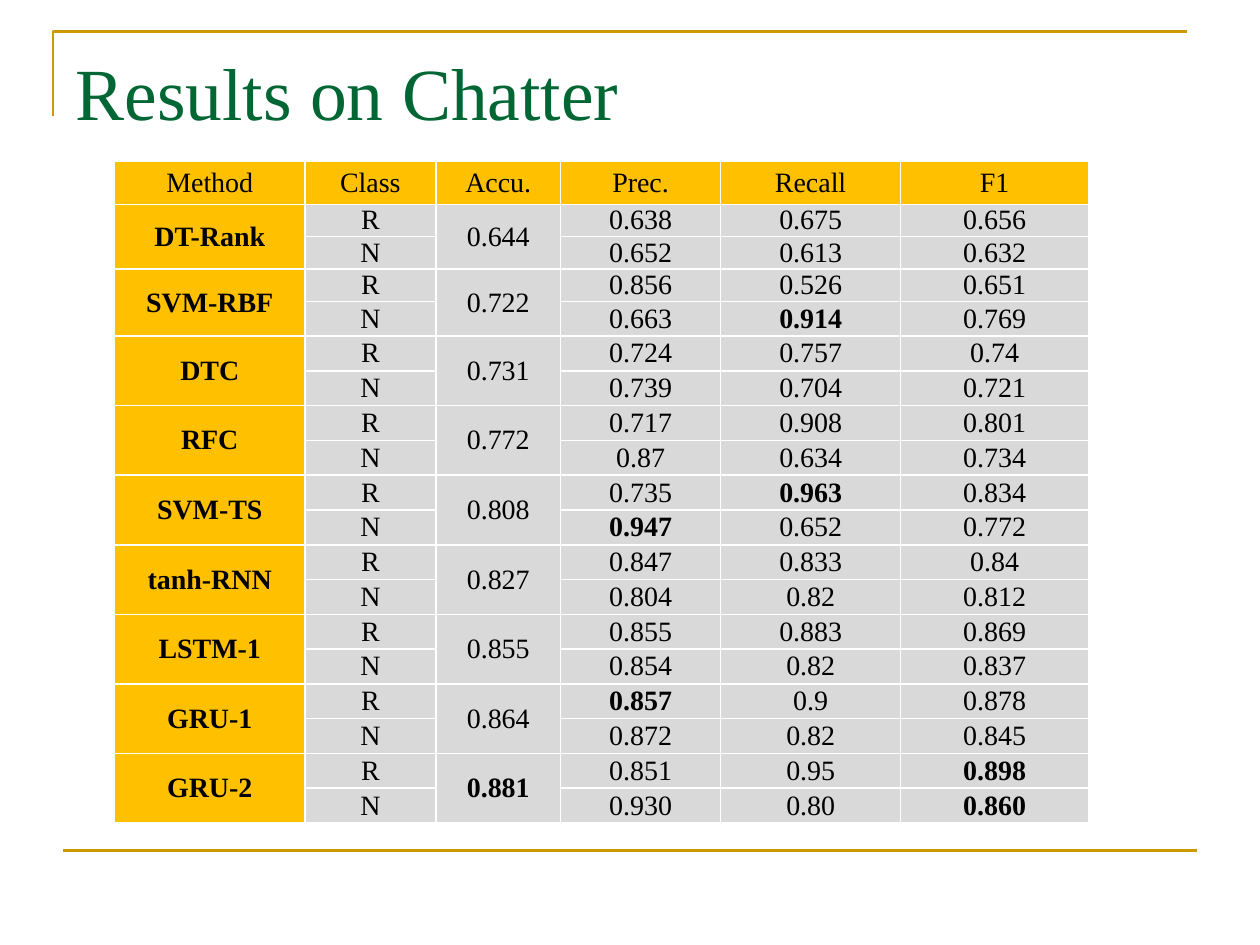
from dataclasses import dataclass

from lxml import etree
from pptx import Presentation
from pptx.dml.color import RGBColor
from pptx.enum.shapes import MSO_CONNECTOR
from pptx.enum.text import MSO_ANCHOR, PP_ALIGN
from pptx.oxml.ns import qn
from pptx.util import Inches, Pt

STRAIGHT = MSO_CONNECTOR.STRAIGHT
MIDDLE = MSO_ANCHOR.MIDDLE
LEFT, CENTER = PP_ALIGN.LEFT, PP_ALIGN.CENTER

GRID_COLUMNS, GRID_ROWS = 100, 75
SLIDE_WIDTH, SLIDE_HEIGHT = Inches(10), Inches(7.5)

HEADINGS = ("Method", "Class", "Accu.", "Prec.", "Recall", "F1")
BEST = "*"
RESULTS = (
    ("DT-Rank", "0.644", ("0.638", "0.675", "0.656"), ("0.652", "0.613", "0.632")),
    ("SVM-RBF", "0.722", ("0.856", "0.526", "0.651"), ("0.663", "*0.914", "0.769")),
    ("DTC", "0.731", ("0.724", "0.757", "0.74"), ("0.739", "0.704", "0.721")),
    ("RFC", "0.772", ("0.717", "0.908", "0.801"), ("0.87", "0.634", "0.734")),
    ("SVM-TS", "0.808", ("0.735", "*0.963", "0.834"), ("*0.947", "0.652", "0.772")),
    ("tanh-RNN", "0.827", ("0.847", "0.833", "0.84"), ("0.804", "0.82", "0.812")),
    ("LSTM-1", "0.855", ("0.855", "0.883", "0.869"), ("0.854", "0.82", "0.837")),
    ("GRU-1", "0.864", ("*0.857", "0.9", "0.878"), ("0.872", "0.82", "0.845")),
    ("GRU-2", "*0.881", ("0.851", "0.95", "*0.898"), ("0.930", "0.80", "*0.860")),
)
COLUMN_WIDTHS = (15.1, 10.4, 9.9, 12.7, 14.3, 14.9)
ROW_HEIGHTS = (3.42,) + (2.57,) * 3 + (2.76,) * 15


@dataclass(frozen=True)
class Theme:
    """Colours, font and sizes of the slide."""

    title: str = "006633"
    rule: str = "CC9900"
    ink: str = "000000"
    accent: str = "FFC000"
    body: str = "D9D9D9"
    border: str = "FFFFFF"
    font: str = "Times New Roman"
    title_size: float = 42
    table_size: float = 16
    rule_width: float = 1.5
    border_width: float = 1


def across(columns):
    """Turn grid columns into a length."""
    return round(SLIDE_WIDTH * columns / GRID_COLUMNS)


def down(rows):
    """Turn grid rows into a length."""
    return round(SLIDE_HEIGHT * rows / GRID_ROWS)


def write(frame, text, *, font, size, color, bold=False, align=CENTER):
    """Write one formatted paragraph into a text frame."""
    paragraph = frame.paragraphs[0]
    paragraph.alignment = align
    run = paragraph.add_run()
    run.text = text
    run.font.name = font
    run.font.size = Pt(size)
    run.font.bold = bold
    run.font.color.rgb = RGBColor.from_string(color)


class ResultsSlide:
    """Draws styled elements on one slide."""

    def __init__(self, slide, theme):
        """Keep the slide and its theme."""
        self.slide = slide
        self.theme = theme

    def title(self, text, left, top, width, height):
        """Place and fill the title placeholder."""
        heading = self.slide.shapes.title
        heading.left, heading.top = across(left), down(top)
        heading.width, heading.height = across(width), down(height)
        heading.text_frame.vertical_anchor = MIDDLE
        write(heading.text_frame, text, font=self.theme.font,
              size=self.theme.title_size, color=self.theme.title, align=LEFT)

    def style_rule(self, line):
        """Give a line the colour and width of a rule."""
        line.color.rgb = RGBColor.from_string(self.theme.rule)
        line.width = Pt(self.theme.rule_width)

    def corner(self, start, *turns):
        """Draw an open angled rule through grid points."""
        points = [(across(x), down(y)) for x, y in (start, *turns)]
        builder = self.slide.shapes.build_freeform(*points[0])
        builder.add_line_segments(points[1:], close=False)
        bracket = builder.convert_to_shape()
        bracket.shadow.inherit = False
        bracket.fill.background()
        self.style_rule(bracket.line)

    def rule(self, left, right, y):
        """Draw a horizontal rule."""
        footer = self.slide.shapes.add_connector(
            STRAIGHT, across(left), down(y), across(right), down(y))
        etree.SubElement(footer.element.spPr, qn("a:effectLst"))
        self.style_rule(footer.line)

    def paint(self, cell, color):
        """Set the fill, margins and borders of a table cell."""
        cell.fill.solid()
        cell.fill.fore_color.rgb = RGBColor.from_string(color)
        cell.vertical_anchor = MIDDLE
        cell.margin_left = cell.margin_right = 0
        cell.margin_top = cell.margin_bottom = 0
        properties = cell._tc.get_or_add_tcPr()
        for position, side in enumerate(("a:lnL", "a:lnR", "a:lnT", "a:lnB")):
            edge = etree.Element(qn(side), w=str(Pt(self.theme.border_width)))
            paint = etree.SubElement(edge, qn("a:solidFill"))
            etree.SubElement(paint, qn("a:srgbClr"), val=self.theme.border)
            properties.insert(position, edge)

    def enter(self, cell, text, bold=False):
        """Write a table entry, in bold if it is marked as best."""
        write(cell.text_frame, text.removeprefix(BEST), font=self.theme.font,
              size=self.theme.table_size, color=self.theme.ink,
              bold=bold or text.startswith(BEST))

    def results_table(self, left, top):
        """Build the table with two class rows for each method."""
        table = self.slide.shapes.add_table(
            len(ROW_HEIGHTS), len(COLUMN_WIDTHS), across(left), down(top),
            across(sum(COLUMN_WIDTHS)), down(sum(ROW_HEIGHTS))).table
        table.first_row = table.horz_banding = False
        for column, width in zip(table.columns, COLUMN_WIDTHS):
            column.width = across(width)
        for row, height in zip(table.rows, ROW_HEIGHTS):
            row.height = down(height)
        for r in range(len(ROW_HEIGHTS)):
            for c in range(len(COLUMN_WIDTHS)):
                accented = r == 0 or c == 0
                self.paint(table.cell(r, c),
                           self.theme.accent if accented else self.theme.body)
        for c, heading in enumerate(HEADINGS):
            self.enter(table.cell(0, c), heading)
        for index, (method, accuracy, *scores) in enumerate(RESULTS):
            first = 1 + 2 * index
            for c, text in ((0, method), (2, accuracy)):
                table.cell(first, c).merge(table.cell(first + 1, c))
                self.enter(table.cell(first, c), text, bold=c == 0)
            for r, (label, values) in enumerate(zip("RN", scores), first):
                self.enter(table.cell(r, 1), label)
                for c, value in enumerate(values, 3):
                    self.enter(table.cell(r, c), value)


def main():
    """Build and save the presentation."""
    deck = Presentation()
    deck.slide_width, deck.slide_height = SLIDE_WIDTH, SLIDE_HEIGHT
    page = ResultsSlide(deck.slides.add_slide(deck.slide_layouts[5]), Theme())
    page.corner((4.2, 9.2), (4.2, 2.5), (94.2, 2.5))
    page.rule(5, 95, 67.5)
    page.title("Results on Chatter", 5, 3, 90, 8.5)
    page.results_table(9.1, 12.8)
    deck.save("out.pptx")


if __name__ == "__main__":
    main()
